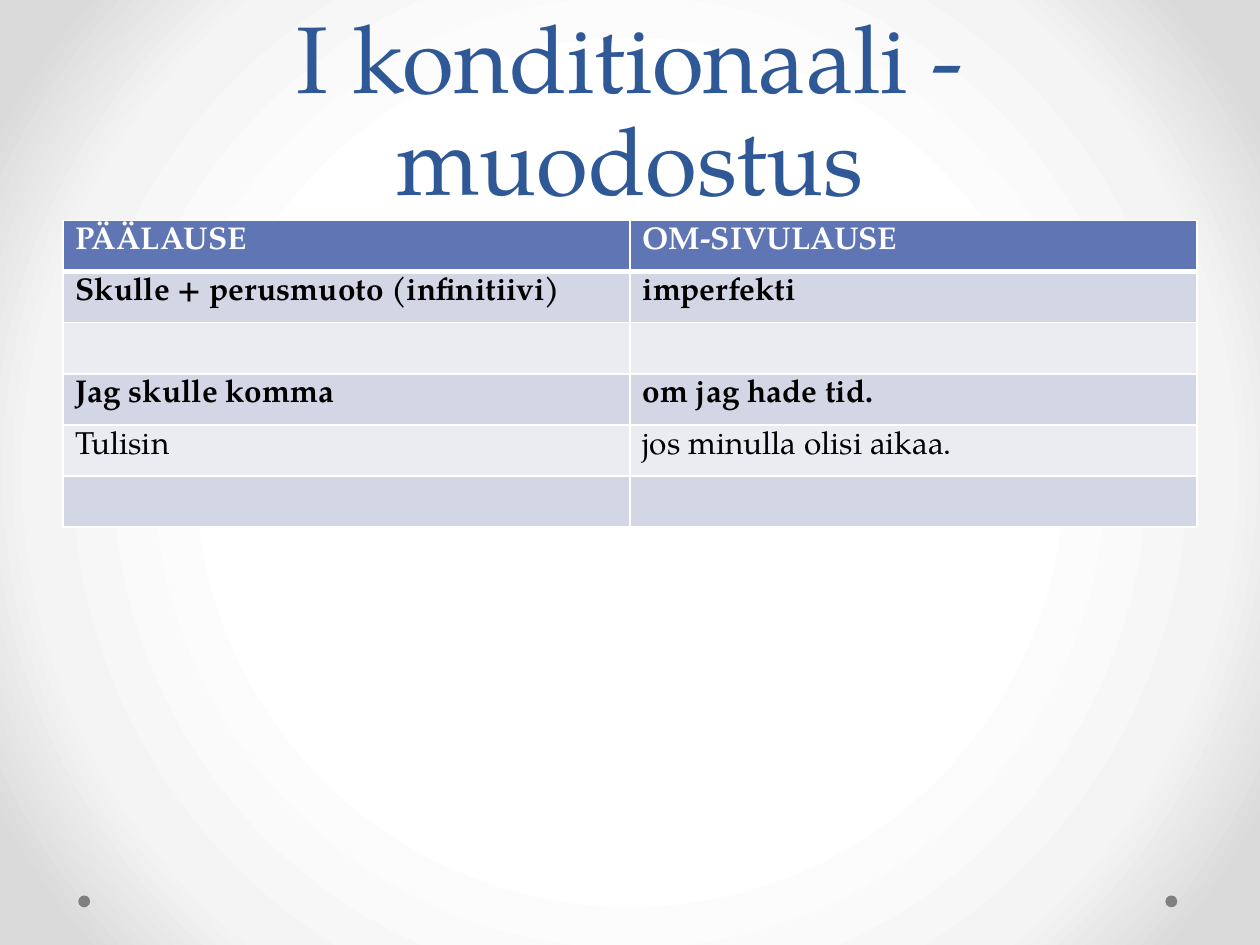
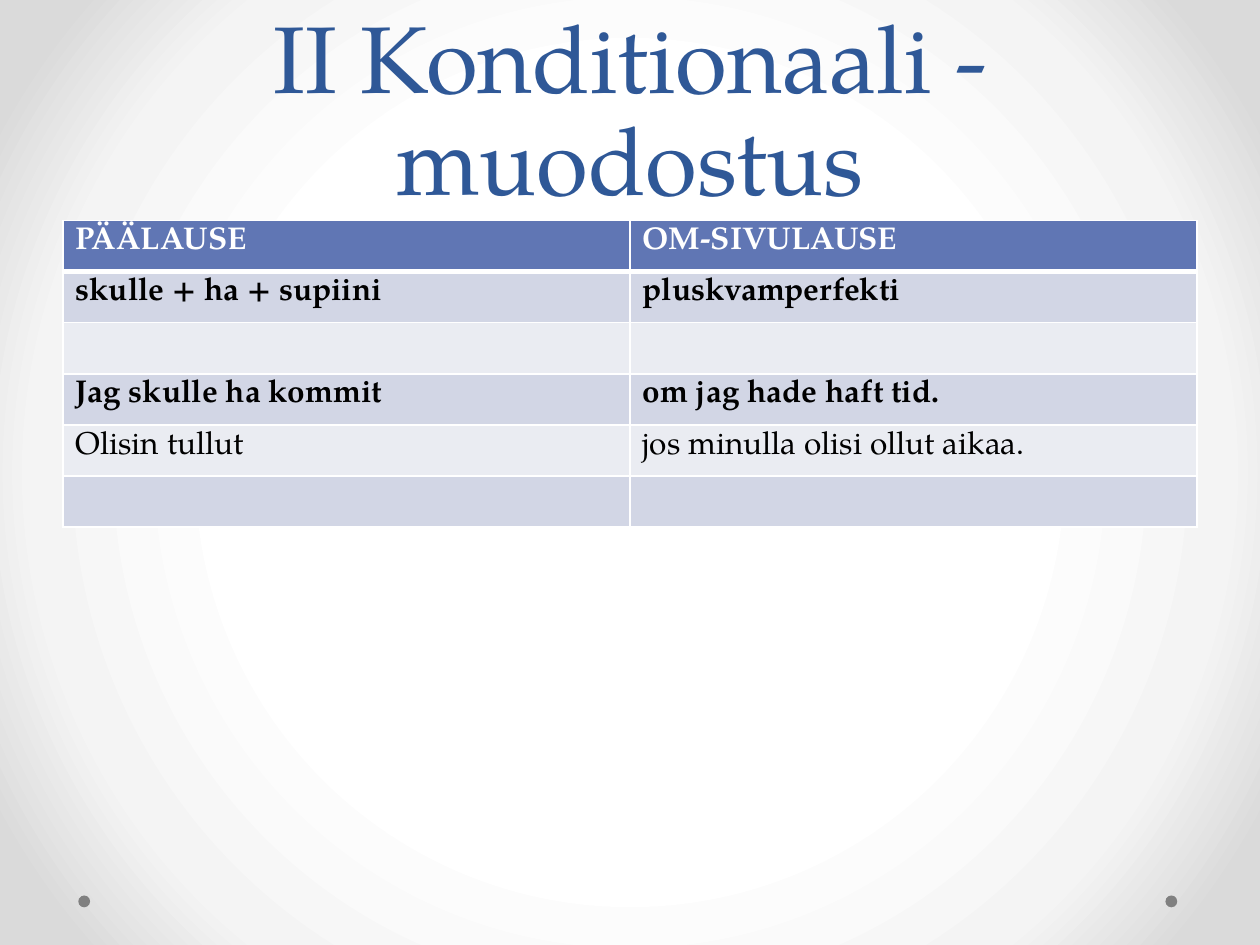
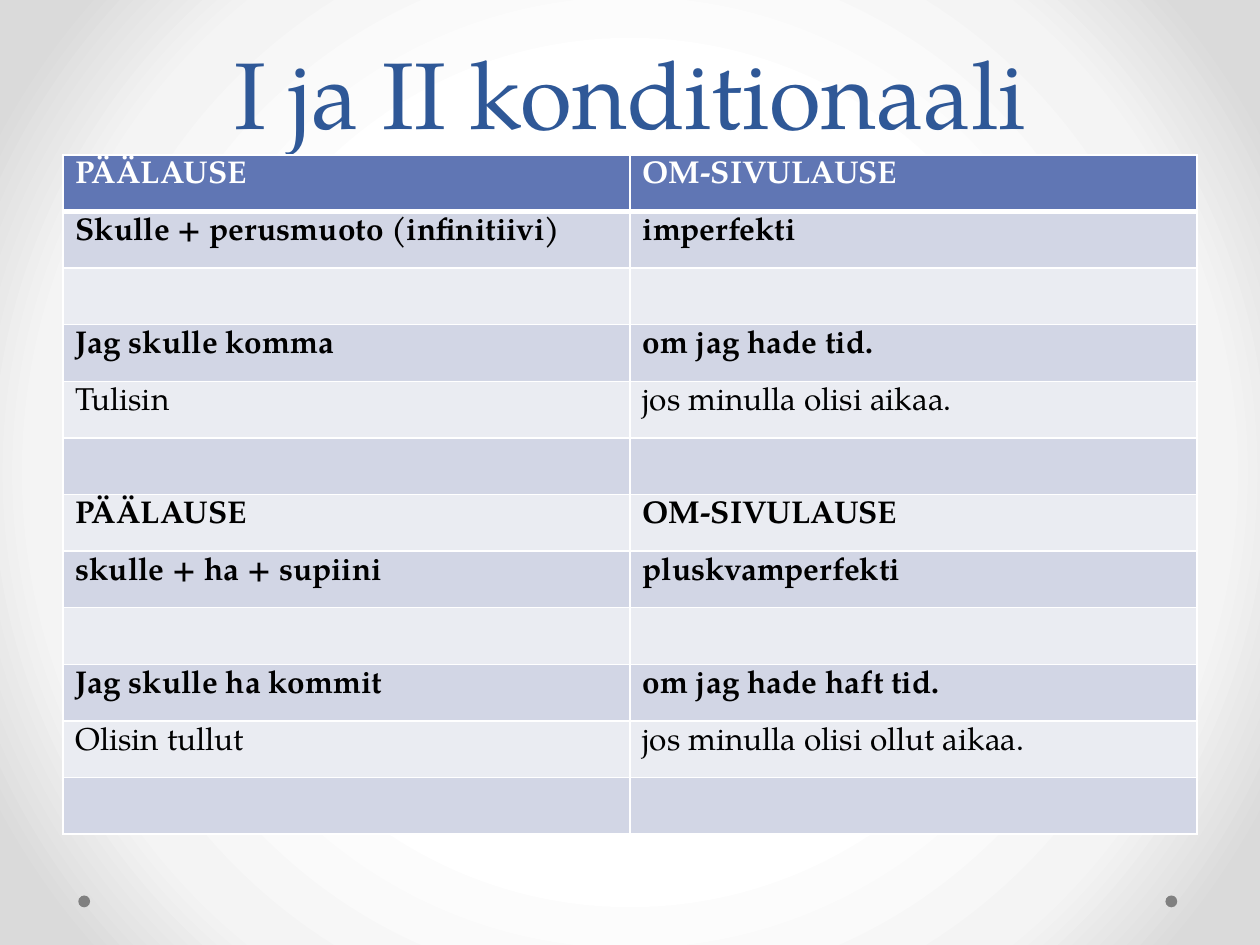
import pptx
import pptx.dml.color
import pptx.enum.shapes
import pptx.enum.text
import pptx.oxml
import pptx.oxml.ns
import pptx.util
from pptx.util import Pt

COLOURS = {
    "title": "2F5897",
    "header": "6076B4",
    "band_dark": "D2D6E5",
    "band_light": "EAECF2",
    "text": "000000",
    "white": "FFFFFF",
    "dot": "808080",
    "middle": "F4F4F4",
    "edge": "DADADA",
}
FONT = "TeX Gyre Pagella"
BACKDROP_STOPS = [(50, "white"), (76, "middle"), (92, "edge")]
MARGIN = 36
CONTENT_WIDTH = 648

HEADINGS = ("PÄÄLAUSE", "OM-SIVULAUSE")
BLANK = ("", "")
FIRST_CONDITIONAL = [
    HEADINGS,
    ("Skulle + perusmuoto (infinitiivi)", "imperfekti"),
    BLANK,
    ("Jag skulle komma", "om jag hade tid."),
    ("Tulisin", "jos minulla olisi aikaa."),
    BLANK,
]
SECOND_CONDITIONAL = [
    HEADINGS,
    ("skulle + ha + supiini", "pluskvamperfekti"),
    BLANK,
    ("Jag skulle ha kommit", "om jag hade haft tid."),
    ("Olisin tullut", "jos minulla olisi ollut aikaa."),
    BLANK,
]
TRANSLATIONS = {FIRST_CONDITIONAL[4], SECOND_CONDITIONAL[4]}

LESSONS = [
    ("I konditionaali - muodostus", 126, 29.2, FIRST_CONDITIONAL),
    ("II Konditionaali - muodostus", 126, 29.2, SECOND_CONDITIONAL),
    ("I ja II konditionaali", 88.5, 32.35, FIRST_CONDITIONAL + SECOND_CONDITIONAL),
]


def colour(name):
    return pptx.dml.color.RGBColor.from_string(COLOURS[name])


def drawing_element(markup):
    namespace = pptx.oxml.ns.nsdecls("a")
    tag, rest = markup.split(" ", 1)
    return pptx.oxml.parse_xml(f"{tag} {namespace} {rest}")


class LessonDeck:
    def __init__(self):
        self.deck = pptx.Presentation()
        self.deck.slide_width = Pt(720)
        self.deck.slide_height = Pt(540)
        self.page = None
        self.set_backdrop()

    def set_backdrop(self):
        fill = self.deck.slide_master.background.fill
        fill.gradient()
        gradient = fill._fill._gradFill
        for child in list(gradient):
            gradient.remove(child)
        stops = "".join(
            f'<a:gs pos="{position * 1000}"><a:srgbClr val="{COLOURS[name]}"/></a:gs>'
            for position, name in BACKDROP_STOPS
        )
        gradient.append(drawing_element(f"<a:gsLst >{stops}</a:gsLst>"))
        gradient.append(drawing_element(
            '<a:path path="circle">'
            '<a:fillToRect l="50000" t="50000" r="50000" b="50000"/></a:path>'
        ))

    def add_page(self):
        self.page = self.deck.slides.add_slide(self.deck.slide_layouts[6])
        for left in (666, 44.75):
            self.add_dot(left, 511.75, 6.75)

    def add_dot(self, left, top, size):
        dot = self.page.shapes.add_shape(
            pptx.enum.shapes.MSO_SHAPE.OVAL, Pt(left), Pt(top), Pt(size), Pt(size)
        )
        dot.shadow.inherit = False
        dot.fill.solid()
        dot.fill.fore_color.rgb = colour("dot")
        dot.line.fill.background()

    def style_paragraph(self, para, size, colour_name, bold=False):
        para.font.name = FONT
        para.font.size = Pt(size)
        para.font.bold = bold
        para.font.color.rgb = colour(colour_name)

    def add_title(self, text, height):
        box = self.page.shapes.add_textbox(Pt(MARGIN), 0, Pt(CONTENT_WIDTH), Pt(height))
        frame = box.text_frame
        frame.word_wrap = True
        frame.vertical_anchor = pptx.enum.text.MSO_ANCHOR.BOTTOM
        para = frame.paragraphs[0]
        para.text = text
        para.alignment = pptx.enum.text.PP_ALIGN.CENTER
        para.line_spacing = Pt(58)
        self.style_paragraph(para, 54, "title")

    def add_table(self, top, row_height, rows):
        table = self.page.shapes.add_table(
            len(rows), 2, Pt(MARGIN), Pt(top),
            Pt(CONTENT_WIDTH), Pt(row_height * len(rows)),
        ).table
        table.horz_banding = False
        for index, texts in enumerate(rows):
            table.rows[index].height = Pt(row_height)
            is_header = index == 0
            band = "header" if is_header else ("band_light", "band_dark")[index % 2]
            for column, text in enumerate(texts):
                cell = table.cell(index, column)
                cell.fill.solid()
                cell.fill.fore_color.rgb = colour(band)
                para = cell.text_frame.paragraphs[0]
                para.text = text
                self.style_paragraph(
                    para, 18, "white" if is_header else "text",
                    bold=texts not in TRANSLATIONS,
                )
                self.add_borders(cell, 3 if index == 0 else 1, 3 if index == 1 else 1)

    def add_borders(self, cell, bottom, top):
        properties = cell._tc.get_or_add_tcPr()
        for position, (side, width) in enumerate(
            [("lnL", 1), ("lnR", 1), ("lnT", top), ("lnB", bottom)]
        ):
            properties.insert(position, drawing_element(
                f'<a:{side} w="{Pt(width)}"><a:solidFill>'
                f'<a:srgbClr val="{COLOURS["white"]}"/></a:solidFill></a:{side}>'
            ))


def main():
    lesson_deck = LessonDeck()
    for title, table_top, row_height, rows in LESSONS:
        lesson_deck.add_page()
        lesson_deck.add_title(title, table_top)
        lesson_deck.add_table(table_top, row_height, rows)
    lesson_deck.deck.save("out.pptx")


if __name__ == "__main__":
    main()
